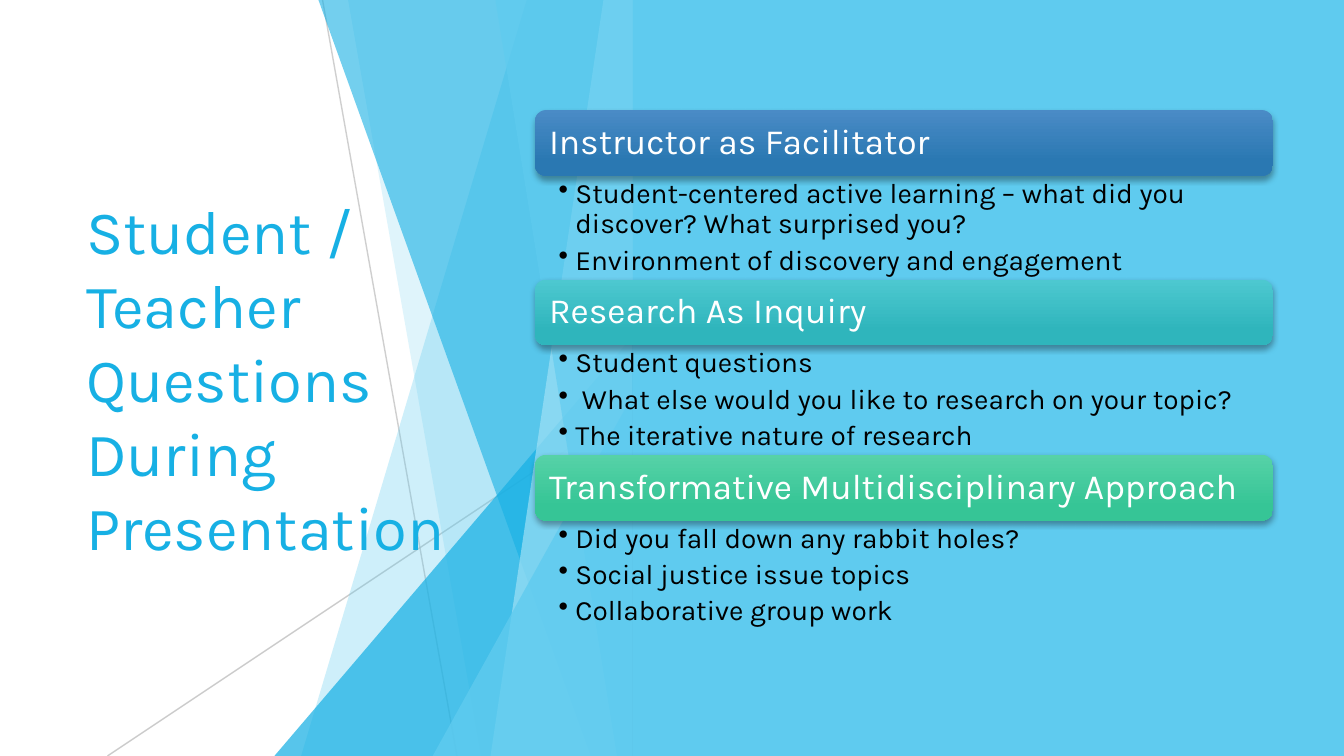
from dataclasses import dataclass

from lxml.etree import SubElement
from pptx import Presentation
from pptx.dml.color import RGBColor
from pptx.enum.shapes import MSO_CONNECTOR, MSO_SHAPE
from pptx.enum.text import MSO_ANCHOR
from pptx.oxml.ns import qn
from pptx.util import Pt

WIDE, HIGH = 720, 405
EDGE = 339  # where the facets meet the blue panel
LEFT, SPAN = 286.6, 395.3
BAR = 35.2
FONT = "Karla"
SKY, BLUE = "5FCBEF", "17B0E4"


@dataclass
class Ray:
    start: tuple[float, float]
    end: tuple[float, float]
    alpha: int


@dataclass
class Facet:
    """A pane from a slanted left side to the panel edge."""
    top: float
    base: float
    color: str
    alpha: int


@dataclass
class Wedge:
    left: float
    top: float
    color: str
    alpha: int


@dataclass
class Topic:
    top: float
    light: str
    dark: str
    head: str
    items: list[str]


RAYS = [
    Ray((172.8, 0), (244.8, HIGH), 75),
    Ray((EDGE, 217.4), (57.6, HIGH), 80),
]
PANES = [
    Facet(282.2, 161.3, SKY, 30),
    Facet(186.5, 257.8, SKY, 20),
    Wedge(147, 180, BLUE, 72),
    Facet(170.6, 316.5, BLUE, 60),
    Facet(323.3, 262.8, "9FE0F5", 70),
    Facet(265.4, 330.5, SKY, 65),
    Wedge(231.8, 211.7, SKY, 80),
]
TOPICS = [
    Topic(59, "4A8BC6", "2A78B2", "Instructor as Facilitator", [
        "Student-centered active learning – what did you discover? "
        "What surprised you?",
        "Environment of discovery and engagement"]),
    Topic(149.8, "4DC8D0", "2FB5BC", "Research As Inquiry", [
        "Student questions",
        " What else would you like to research on your topic?",
        "The iterative nature of research"]),
    Topic(243.7, "56D2A7", "36C596",
          "Transformative Multidisciplinary Approach", [
              "Did you fall down any rabbit holes?",
              "Social justice issue topics",
              "Collaborative group work"]),
]


def rgb(code: str) -> RGBColor:
    return RGBColor.from_string(code)


def fade(shape, alpha: int) -> None:
    """Make the shape's solid colour partly transparent."""
    color = next(shape._element.spPr.iter(qn("a:srgbClr")))
    SubElement(color, qn("a:alpha"), val=str(alpha * 1000))


def paint(shape, color: str, alpha: int = 100) -> None:
    shape.shadow.inherit = False
    shape.fill.solid()
    shape.fill.fore_color.rgb = rgb(color)
    shape.line.fill.background()
    if alpha < 100:
        fade(shape, alpha)


def add_ray(slide, ray: Ray) -> None:
    line = slide.shapes.add_connector(
        MSO_CONNECTOR.STRAIGHT, *map(Pt, ray.start + ray.end))
    line.line.width = Pt(0.75)
    line.line.color.rgb = rgb("BFBFBF")
    fade(line, ray.alpha)
    SubElement(line._element.spPr, qn("a:effectLst"))


def add_facet(slide, pane: Facet) -> None:
    pen = slide.shapes.build_freeform(Pt(pane.top), 0)
    pen.add_line_segments([(Pt(EDGE), 0), (Pt(EDGE), Pt(HIGH)),
                           (Pt(pane.base), Pt(HIGH))])
    paint(pen.convert_to_shape(), pane.color, pane.alpha)


def add_wedge(slide, pane: Wedge) -> None:
    shape = slide.shapes.add_shape(
        MSO_SHAPE.ISOSCELES_TRIANGLE, Pt(pane.left), Pt(pane.top),
        Pt(EDGE - pane.left), Pt(HIGH - pane.top))
    shape.adjustments[0] = 1
    paint(shape, pane.color, pane.alpha)


def add_text(slide, box: tuple, lines: list[str], size: float, color: str,
             pads: tuple, anchor=MSO_ANCHOR.MIDDLE, pitch: float = 1,
             after: float = 0, dots: bool = False) -> None:
    """Write one paragraph per line; pads run left, top, right, bottom."""
    frame = slide.shapes.add_textbox(*map(Pt, box)).text_frame
    frame.word_wrap = True
    frame.vertical_anchor = anchor
    (frame.margin_left, frame.margin_top,
     frame.margin_right, frame.margin_bottom) = map(Pt, pads)
    frame.text = "\n".join(lines)
    for para in frame.paragraphs:
        para.line_spacing = pitch
        para.space_after = Pt(after)
        if dots:
            props = para._p.get_or_add_pPr()
            props.set("marL", str(Pt(9)))
            props.set("indent", str(Pt(-9)))
            SubElement(props, qn("a:buChar"), char="•")
        para.font.name = FONT
        para.font.size = Pt(size)
        para.font.color.rgb = rgb(color)


def add_bar(slide, topic: Topic) -> None:
    bar = slide.shapes.add_shape(MSO_SHAPE.ROUNDED_RECTANGLE, Pt(LEFT),
                                 Pt(topic.top), Pt(SPAN), Pt(BAR))
    bar.shadow.inherit = False
    bar.line.fill.background()
    bar.fill.gradient()
    bar.fill.gradient_angle = 270
    stops = zip(bar.fill.gradient_stops, (0, 0.78), (topic.light, topic.dark))
    for stop, place, color in stops:
        stop.position = place
        stop.color.rgb = rgb(color)
    glow = SubElement(
        bar._element.spPr.find(qn("a:effectLst")), qn("a:outerShdw"),
        blurRad=str(Pt(3)), dist=str(Pt(2)), dir="5400000", rotWithShape="0")
    tint = SubElement(glow, qn("a:srgbClr"), val="000000")
    SubElement(tint, qn("a:alpha"), val="35000")


def add_topic(slide, topic: Topic) -> None:
    add_bar(slide, topic)
    add_text(slide, (LEFT + 1.7, topic.top + 1.7, SPAN - 3.4, BAR - 3.4),
             [topic.head], 19, "FFFFFF", (5.8,) * 4, pitch=0.9)
    add_text(slide, (LEFT, topic.top + BAR, SPAN, 58), topic.items, 15,
             "000000", (12.6, 1.9, 10.7, 1.9), MSO_ANCHOR.TOP,
             pitch=0.9, after=3.2, dots=True)


def main() -> None:
    deck = Presentation()
    deck.slide_width, deck.slide_height = Pt(WIDE), Pt(HIGH)
    slide = deck.slides.add_slide(deck.slide_layouts[6])
    for ray in RAYS:
        add_ray(slide, ray)
    for pane in PANES:
        if isinstance(pane, Facet):
            add_facet(slide, pane)
        else:
            add_wedge(slide, pane)
    add_text(slide, (39, 81.4, 209.5, 242),
             ["Student / Teacher Questions During Presentation"],
             33, BLUE, (7.2, 3.6, 7.2, 3.6))
    panel = slide.shapes.add_shape(MSO_SHAPE.RECTANGLE, Pt(EDGE), 0,
                                   Pt(WIDE - EDGE), Pt(HIGH))
    paint(panel, SKY)
    for topic in TOPICS:
        add_topic(slide, topic)
    deck.save("out.pptx")


if __name__ == "__main__":
    main()
